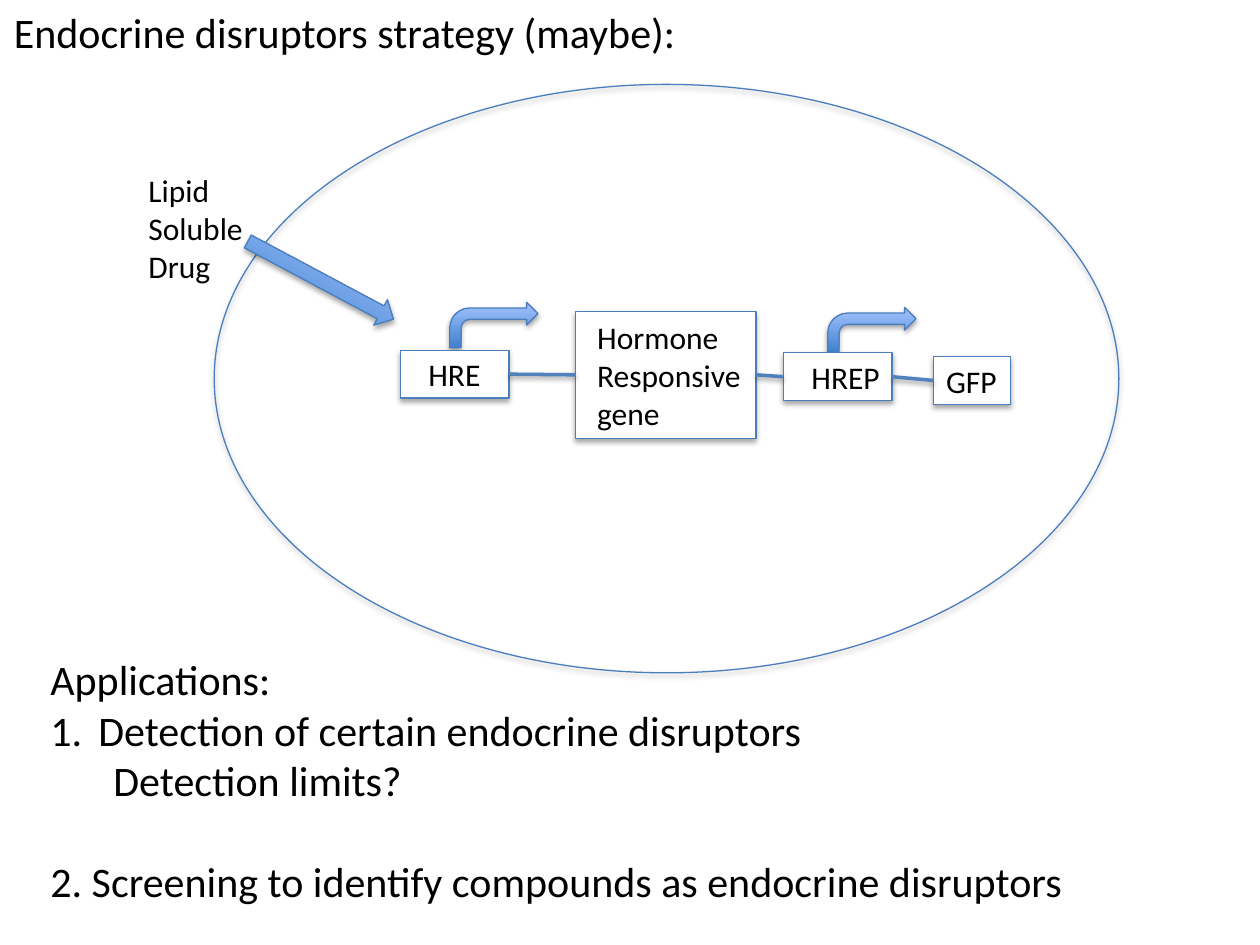
from dataclasses import dataclass
from pptx import Presentation
from pptx import util as u
from pptx.dml.color import RGBColor
from pptx.enum import shapes, text
from pptx.oxml import parse_xml
from pptx.oxml.ns import nsdecls
from lxml import etree

A = "{http://schemas.openxmlformats.org/drawingml/2006/main}"
G = shapes.MSO_SHAPE


@dataclass(frozen=True)
class Theme:
    font: str = "Calibri"
    head: int = 24
    label: int = 18
    ink: str = "000000"
    paper: str = "FFFFFF"
    edge: str = "4B7EBC"
    link: str = "4F81BD"
    dark: str = "3F80CE"
    light: str = "A4C4FF"
    edge_width: float = 0.75
    link_width: float = 2


T = Theme()
prs = Presentation()
prs.slide_width, prs.slide_height = u.Inches(10), u.Inches(7.5)
COL, ROW = prs.slide_width / 100, prs.slide_height / 75


def rgb(value):
    return RGBColor.from_string(value)


def grid(box, c, r, w, h):
    return box[0] + c, box[1] + r, w, h


def emu(box):
    c, r, w, h = box
    return [round(v) for v in (c * COL, r * ROW, w * COL, h * ROW)]


def apply(obj, fmt):
    for name, value in fmt.items():
        setattr(obj, name, value)


def place(sp, box):
    apply(sp, dict(zip(("left", "top", "width", "height"), emu(box))))


def cast_shadow(sp, alpha, dist):
    sp._element.spPr.append(parse_xml(
        f'<a:effectLst {nsdecls("a")}><a:outerShdw blurRad="{u.Pt(3.1)}" '
        f'dist="{u.Pt(dist)}" dir="5400000" rotWithShape="0"><a:srgbClr val="{T.ink}">'
        f'<a:alpha val="{alpha * 1000}"/></a:srgbClr></a:outerShdw></a:effectLst>'))


def write(p, words, size):
    r = p.add_run()
    r.text = words
    apply(r.font, {"name": T.font, "size": u.Pt(size), "bold": False})
    r.font.color.rgb = rgb(T.ink)
    p.alignment = text.PP_ALIGN.LEFT


def write_lines(tf, lines, size):
    for i, words in enumerate(lines):
        write(tf.add_paragraph() if i else tf.paragraphs[0], words, size)


def shape(s, kind, box, fill=None):
    sp = s.shapes.add_shape(kind, *emu(box))
    if fill == "gradient":
        sp.fill.gradient()
        sp.fill.gradient_angle = 90
        for stop, color in zip(sp.fill.gradient_stops, (T.dark, T.light)):
            stop.color.rgb = rgb(color)
    elif fill:
        sp.fill.solid()
        sp.fill.fore_color.rgb = rgb(fill)
    else:
        sp.fill.background()
    sp.line.color.rgb = rgb(T.edge)
    sp.line.width = u.Pt(T.edge_width)
    cast_shadow(sp, 35, 1.8)
    return sp


def gene_box(s, box, lines, inset):
    sp = shape(s, G.RECTANGLE, box, T.paper)
    tf = sp.text_frame
    apply(tf, {"word_wrap": True, "margin_left": u.Inches(inset), "margin_right": 0,
               "margin_top": 0, "margin_bottom": 0,
               "vertical_anchor": text.MSO_ANCHOR.MIDDLE})
    write_lines(tf, lines, T.label)
    return sp


def link(s, start, end):
    cx = s.shapes.add_connector(shapes.MSO_CONNECTOR.STRAIGHT, 0, 0, 0, 0)
    cx.begin_connect(start, 3)
    cx.end_connect(end, 1)
    cx.line.color.rgb = rgb(T.link)
    cx.line.width = u.Pt(T.link_width)
    cast_shadow(cx, 38, 1.6)


def cell(s, box):
    shape(s, G.OVAL, box)
    for c, r in ((18.7, 17.3), (48.7, 17.7)):
        shape(s, G.BENT_ARROW, grid(box, c, r, 7, 3.6), "gradient")
    parts = (
        ((14.8, 21.1, 8.6, 3.8), ["HRE"], 0.22),
        ((28.7, 18, 14.3, 10.1), ["Hormone", "Responsive", "gene"], 0.17),
        ((45.2, 21.3, 8.6, 3.8), ["HREP"], 0.22),
        ((57.1, 21.6, 6.1, 3.8), ["GFP"], 0.1),
    )
    chain = [gene_box(s, grid(box, *at), lines, inset) for at, lines, inset in parts]
    for start, end in zip(chain, chain[1:]):
        link(s, start, end)


def drug(s, box):
    tb = s.shapes.add_textbox(*emu(box))
    tb.text_frame.word_wrap = True
    write_lines(tb.text_frame, ["Lipid", "Soluble", "Drug"], T.label)
    shape(s, G.RIGHT_ARROW, grid(box, 8.1, 8, 13.1, 2.3), "gradient").rotation = 28.1


def placeholder(sp, box):
    place(sp, box)
    apply(sp.text_frame, {"word_wrap": False, "auto_size": text.MSO_AUTO_SIZE.NONE,
                          "vertical_anchor": text.MSO_ANCHOR.TOP})
    return sp.text_frame


def title(s, box):
    tf = placeholder(s.shapes.title, box)
    write(tf.paragraphs[0], "Endocrine disruptors strategy (maybe):", T.head)


def applications(s, box):
    tf = placeholder(s.placeholders[1], box)
    items = (
        ("Applications:", 0, 0, 0, False, 0),
        ("Detection of certain endocrine disruptors", 0, 0.38, -0.38, True, 0),
        ("Detection limits?", 1, 0.88, -0.38, False, 0),
        ("2. Screening to identify compounds as endocrine disruptors",
         1, 0, 0, False, 1.2 * T.head),
    )
    for i, (words, level, margin, indent, numbered, gap) in enumerate(items):
        p = tf.add_paragraph() if i else tf.paragraphs[0]
        p.level = level
        pPr = p._p.get_or_add_pPr()
        pPr.set("marL", str(u.Inches(margin)))
        pPr.set("indent", str(u.Inches(indent)))
        if numbered:
            etree.SubElement(pPr, A + "buFont", typeface="+mj-lt")
            etree.SubElement(pPr, A + "buAutoNum", type="arabicPeriod")
        else:
            etree.SubElement(pPr, A + "buNone")
        p.space_before = u.Pt(gap)
        write(p, words, T.head)


def main():
    s = prs.slides.add_slide(prs.slide_layouts[1])
    title(s, (0.1, 0, 55, 5))
    cell(s, (17, 6.7, 71.8, 46.7))
    drug(s, (10.8, 13.1, 16.8, 10.1))
    applications(s, (3, 51.4, 82.4, 21.2))
    prs.save("out.pptx")


if __name__ == "__main__":
    main()
